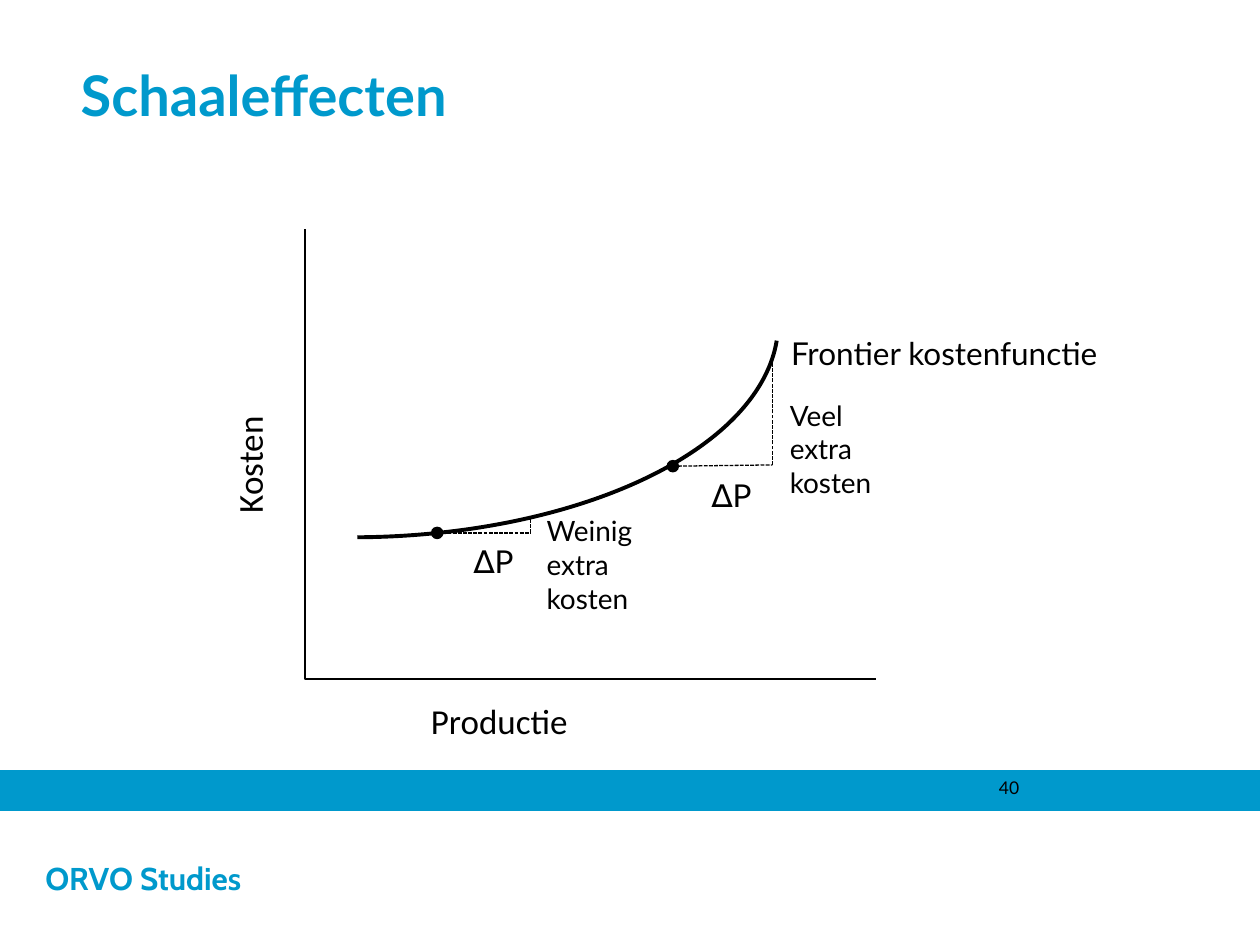
from pptx import Presentation
from pptx.dml.color import RGBColor
from pptx.enum.dml import MSO_LINE
from pptx.enum.shapes import MSO_CONNECTOR, MSO_SHAPE
from pptx.enum.text import MSO_ANCHOR, PP_ALIGN
from pptx.oxml.ns import qn
from pptx.util import Inches, Pt

BLUE, BLACK, WHITE = "0099CC", "000000", "FFFFFF"
INSET = (0.1, 0.05, 0.1, 0.05)


def rgb(value):
    return RGBColor.from_string(value)


def write(sp, text, size, font="Lato", color=BLACK, bold=False,
          anchor=MSO_ANCHOR.TOP, inset=INSET, wrap=True):
    """Put one left-aligned paragraph in a shape."""
    tf = sp.text_frame
    sides = ("margin_left", "margin_top", "margin_right", "margin_bottom")
    frame = dict(zip(sides, map(Inches, inset)),
                 word_wrap=wrap, vertical_anchor=anchor)
    for name, value in frame.items():
        setattr(tf, name, value)
    p = tf.paragraphs[0]
    p.alignment = PP_ALIGN.LEFT
    r = p.add_run()
    r.text = text
    for name, value in {"name": font, "size": Pt(size), "bold": bold}.items():
        setattr(r.font, name, value)
    r.font.color.rgb = rgb(color)


def add_label(s, box, text, size, rotation=0, **style):
    sp = s.shapes.add_textbox(*map(Inches, box))
    sp.rotation = rotation
    write(sp, text, size, **style)


def paint(sp, fill=None, line=None, width=0.75):
    sp.shadow.inherit = False
    if fill:
        sp.fill.solid()
        sp.fill.fore_color.rgb = rgb(fill)
    else:
        sp.fill.background()
    if line:
        sp.line.color.rgb = rgb(line)
        sp.line.width = Pt(width)
    else:
        sp.line.fill.background()


def add_shape(s, kind, box, **style):
    sp = s.shapes.add_shape(kind, *map(Inches, box))
    paint(sp, **style)
    return sp


def add_dashed(s, start, end):
    sp = s.shapes.add_connector(MSO_CONNECTOR.STRAIGHT,
                                *map(Inches, start + end))
    sp.line.color.rgb = rgb(BLACK)
    sp.line.width = Pt(0.75)
    sp.line.dash_style = MSO_LINE.SQUARE_DOT
    sp._element.spPr.append(sp._element.spPr.makeelement(qn("a:effectLst"), {}))


def add_axes(s, top, origin, right):
    points = [tuple(map(Inches, pt)) for pt in (top, origin, right)]
    builder = s.shapes.build_freeform(*points[0])
    builder.add_line_segments(points[1:], close=False)
    paint(builder.convert_to_shape(), line=BLACK, width=1.5)


def add_cost_curve(s):
    # A quarter ellipse: angles in 60000ths of a degree, scaled by 100000
    sp = add_shape(s, MSO_SHAPE.ARC, (1.09, -0.82, 3.4, 6.77),
                   line=BLACK, width=2.25)
    sp.rotation = 90
    for i, degrees in enumerate((272.36, 358.48)):
        sp.adjustments[i] = degrees * 0.6


def add_dot(s, x, y, size=0.1):
    add_shape(s, MSO_SHAPE.OVAL, (x - size / 2, y - size / 2, size, size),
              fill=BLACK)


def main():
    prs = Presentation()
    prs.slide_width, prs.slide_height = Inches(10), Inches(7.5)
    s = prs.slides.add_slide(prs.slide_layouts[5])

    # Footer
    footer = add_shape(s, MSO_SHAPE.RECTANGLE, (0, 6.44, 10, 1.06), fill=WHITE)
    write(footer, "ORVO Studies", 18, font="Cabin", color=BLUE, bold=True,
          anchor=MSO_ANCHOR.MIDDLE, inset=(0.36, 0.05, 0.1, 0.05), wrap=False)
    add_shape(s, MSO_SHAPE.RECTANGLE, (0, 6.12, 10, 0.31), fill=BLUE, line=BLUE)
    add_label(s, (7.83, 6.12, 2.08, 0.25), "40", 10)

    # Title
    title = s.shapes.title
    box = map(Inches, (0.54, 0.43, 8.94, 0.91))
    for name, value in zip(("left", "top", "width", "height"), box):
        setattr(title, name, value)
    write(title, "Schaaleffecten", 32, color=BLUE, bold=True)

    # Axes and cost function
    add_axes(s, (2.42, 1.82), (2.42, 5.39), (6.95, 5.39))
    add_label(s, (3.42, 5.55, 1.1, 0.34), "Productie", 20, font="Calibri",
              inset=(0, 0, 0, 0), wrap=False)
    add_label(s, (1.38, 3.35, 1.2, 0.44), "Kosten", 20, rotation=270,
              font="Calibri")
    add_cost_curve(s)
    add_label(s, (6.18, 2.6, 2.81, 0.4), "Frontier kostenfunctie", 18)

    # Extra cost of the same step in production, low and high on the curve
    steps = [
        ((3.47, 4.23), (4.21, 4.23), 4.11, (3.66, 4.25),
         "Weinig extra kosten", (4.24, 4.03, 1.14, 0.91)),
        ((5.34, 3.7), (6.13, 3.69), 2.84, (5.55, 3.73),
         "Veel extra kosten", (6.17, 3.11, 1.04, 0.91)),
    ]
    for start, corner, top, delta, text, box in steps:
        add_dashed(s, start, corner)
        add_dashed(s, corner, (corner[0], top))
        add_dot(s, *start)
        add_label(s, delta + (0.55, 0.4), "∆P", 18)
        add_label(s, box, text, 16)

    prs.save("out.pptx")


if __name__ == "__main__":
    main()
